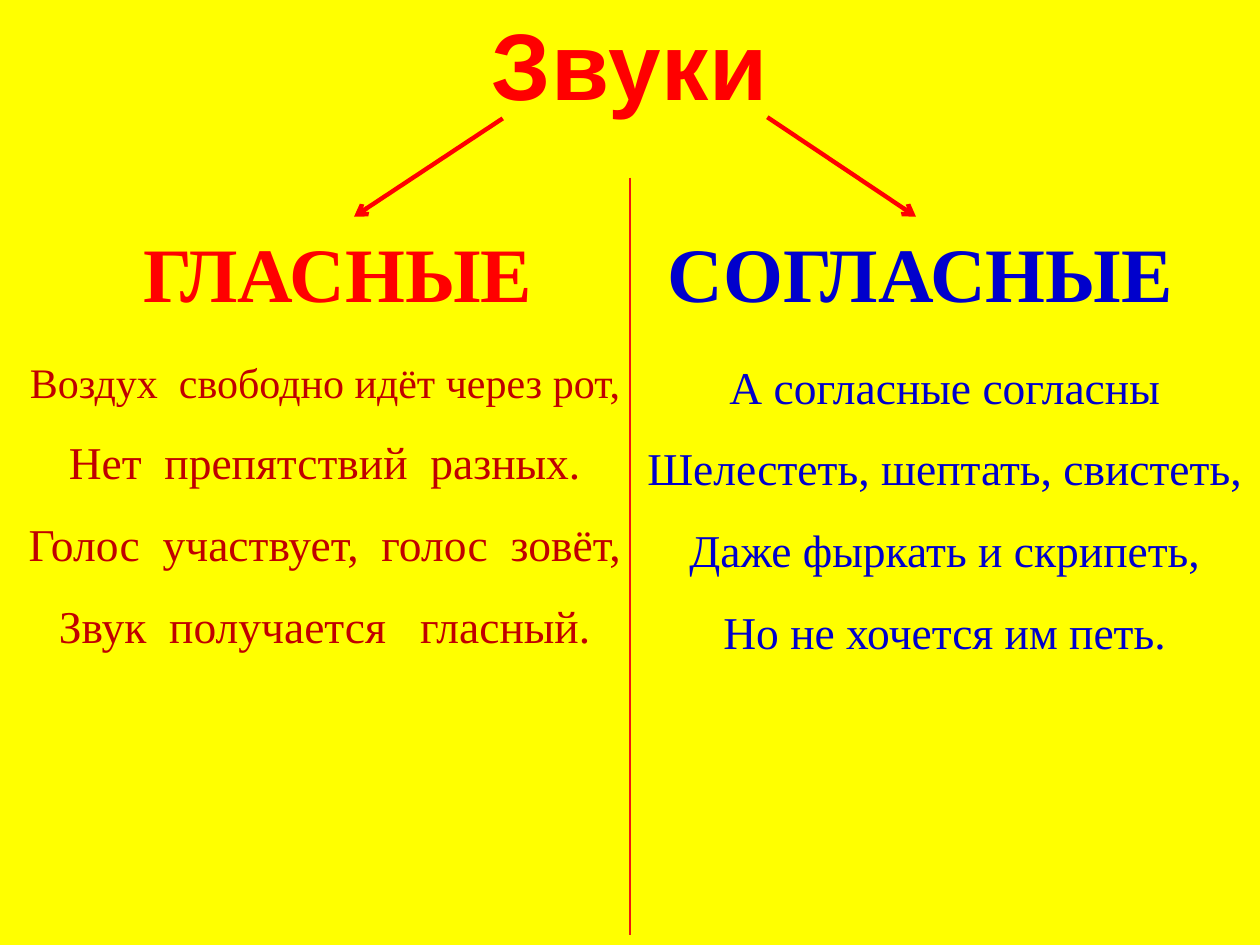
from lxml.etree import SubElement
from pptx import Presentation
from pptx.dml.color import RGBColor
from pptx.enum.shapes import MSO_CONNECTOR
from pptx.enum.text import MSO_ANCHOR, MSO_AUTO_SIZE, PP_ALIGN
from pptx.oxml.ns import qn
from pptx.util import Inches, Pt

YELLOW = RGBColor(0xFF, 0xFF, 0x00)
RED = RGBColor(0xFF, 0x00, 0x00)
DARK_RED = RGBColor(0xC0, 0x00, 0x00)
BLUE = RGBColor(0x00, 0x00, 0xCC)
DIVIDER_RED = RGBColor(0xF0, 0x15, 0x10)
SERIF = "Times New Roman"

# Content: boxes are left, top, width, height in inches
TITLE = "Звуки"
TITLE_BOX = (0, 0, 10, 1.01)
COLUMNS = [
    {
        "heading": "ГЛАСНЫЕ", "heading_color": RED,
        "heading_box": (1.02, 1.74, 3.32, 0.84), "heading_wrap": False,
        "verse": [
            ("Воздух  свободно идёт через рот,", 24),
            ("Нет  препятствий  разных.", 26),
            ("Голос  участвует,  голос  зовёт,", 26),
            ("Звук  получается   гласный.", 26),
        ],
        "verse_color": DARK_RED, "verse_box": (0.08, 2.58, 5, 2.68),
        "arrow": ((3.99, 0.94), (2.81, 1.72)),
    },
    {
        "heading": "СОГЛАСНЫЕ", "heading_color": BLUE,
        "heading_box": (4.92, 1.74, 4.77, 0.84), "heading_wrap": True,
        "verse": [
            ("А согласные согласны", 26),
            ("Шелестеть, шептать, свистеть,", 26),
            ("Даже фыркать и скрипеть,", 26),
            ("Но не хочется им петь.", 26),
        ],
        "verse_color": BLUE, "verse_box": (5, 2.58, 5, 2.65),
        "arrow": ((6.09, 0.93), (7.27, 1.72)),
    },
]
DIVIDER = ((5, 1.41), (5, 7.42))


def write_text(shape, box, lines, *, font, color, bold=False, wrap=True,
               line_spacing=1.0, tracking=None):
    """Place a shape and fill it with centred (text, size) lines."""
    shape.left, shape.top, shape.width, shape.height = map(Inches, box)
    frame = shape.text_frame
    frame.word_wrap = wrap
    frame.auto_size = MSO_AUTO_SIZE.SHAPE_TO_FIT_TEXT
    frame.vertical_anchor = MSO_ANCHOR.TOP
    for index, (text, size) in enumerate(lines):
        paragraph = frame.add_paragraph() if index else frame.paragraphs[0]
        paragraph.alignment = PP_ALIGN.CENTER
        paragraph.line_spacing = line_spacing
        run = paragraph.add_run()
        run.text = text
        run.font.name = font
        run.font.size = Pt(size)
        run.font.bold = bold
        run.font.color.rgb = color
        if tracking:
            run.font._element.set("spc", str(int(tracking * 100)))


def add_text(slide, box, lines, **text_format):
    write_text(slide.shapes.add_textbox(*map(Inches, box)), box, lines, **text_format)


def add_line(slide, start, end, color, width, arrow=False):
    line = slide.shapes.add_connector(
        MSO_CONNECTOR.STRAIGHT, *map(Inches, start + end))
    line.line.color.rgb = color
    line.line.width = Pt(width)
    properties = line._element.spPr
    if arrow:
        SubElement(properties.find(qn("a:ln")), qn("a:tailEnd"), type="arrow")
    SubElement(properties, qn("a:effectLst"))


def main():
    presentation = Presentation()
    presentation.slide_width, presentation.slide_height = Inches(10), Inches(7.5)
    slide = presentation.slides.add_slide(presentation.slide_layouts[5])
    slide.background.fill.solid()
    slide.background.fill.fore_color.rgb = YELLOW

    # Title
    write_text(slide.shapes.title, TITLE_BOX, [(TITLE, 54)],
               font="Arial", color=RED, bold=True, tracking=0.5)

    # Two columns, each with its arrow, heading and verse
    for column in COLUMNS:
        add_line(slide, *column["arrow"], RED, 2.5, arrow=True)
        add_text(slide, column["heading_box"], [(column["heading"], 44)],
                 font=SERIF, color=column["heading_color"], bold=True,
                 wrap=column["heading_wrap"])
        add_text(slide, column["verse_box"], column["verse"],
                 font=SERIF, color=column["verse_color"], line_spacing=1.5)

    # Divider between the columns
    add_line(slide, *DIVIDER, DIVIDER_RED, 1)

    presentation.save("out.pptx")


if __name__ == "__main__":
    main()
